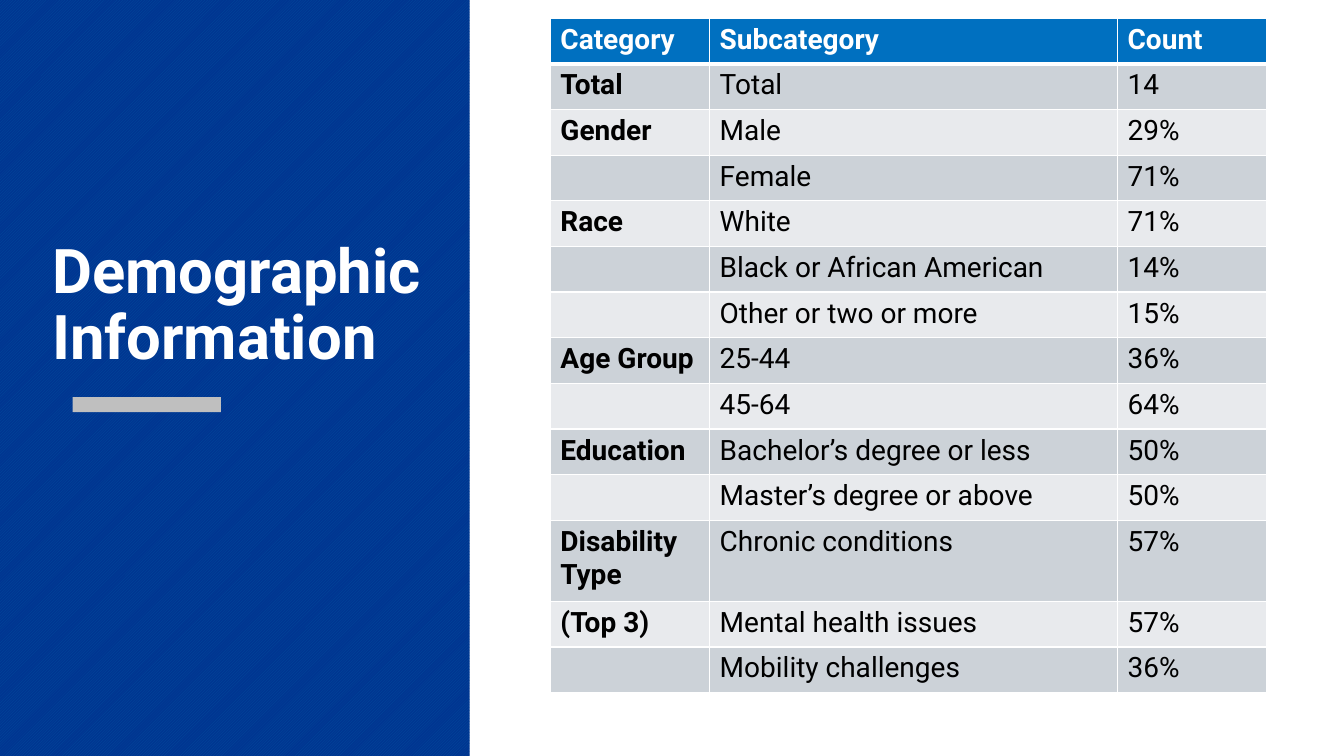
from lxml import etree
from pptx import Presentation
from pptx.dml.color import RGBColor
from pptx.enum import dml, shapes, text
from pptx.oxml import ns
from pptx.util import Pt

FONT = "Roboto"
WHITE = "FFFFFF"
COLUMN_WIDTHS = (113.8, 291.4, 106.6)
ROW_HEIGHT = 32.6
TALL_ROW_HEIGHT = 57.9
ROWS = [
    ("Category", "Subcategory", "Count"),
    ("Total", "Total", "14"),
    ("Gender", "Male", "29%"),
    ("", "Female", "71%"),
    ("Race", "White", "71%"),
    ("", "Black or African American", "14%"),
    ("", "Other or two or more", "15%"),
    ("Age Group", "25-44", "36%"),
    ("", "45-64", "64%"),
    ("Education", "Bachelor’s degree or less", "50%"),
    ("", "Master’s degree or above", "50%"),
    ("Disability Type", "Chronic conditions", "57%"),
    ("(Top 3)", "Mental health issues", "57%"),
    ("", "Mobility challenges", "36%"),
]


def color(value):
    """Turn a hex string into a colour."""
    return RGBColor.from_string(value)


def style_font(paragraph, size, value, bold):
    """Set the font of a whole paragraph."""
    font = paragraph.font
    font.name, font.size, font.bold = FONT, Pt(size), bold
    font.color.rgb = color(value)


def add_rectangle(slide, left, top, width, height):
    """Add a rectangle without line or shadow."""
    shape = slide.shapes.add_shape(
        shapes.MSO_SHAPE.RECTANGLE, Pt(left), Pt(top), Pt(width), Pt(height))
    shape.shadow.inherit = False
    shape.line.fill.background()
    return shape


def add_title_panel(slide, left, top, width, height):
    """Add the hatched side panel with its title and accent bar."""
    panel = add_rectangle(slide, left, top, width, height)
    panel.fill.patterned()
    panel.fill.pattern = dml.MSO_PATTERN.DARK_UPWARD_DIAGONAL
    panel.fill.fore_color.rgb = color("004F9D")
    panel.fill.back_color.rgb = color("013591")

    accent = add_rectangle(slide, left + 52, top + 283.7, 105.8, 10.8)
    accent.fill.solid()
    accent.fill.fore_color.rgb = color("BFBFBF")

    title = slide.shapes.add_textbox(
        Pt(left + 30.2), Pt(top + 74.9), Pt(width - 41.8), Pt(195.1))
    frame = title.text_frame
    frame.word_wrap = True
    frame.vertical_anchor = text.MSO_ANCHOR.BOTTOM
    paragraph = frame.paragraphs[0]
    paragraph.text = "Demographic Information"
    paragraph.line_spacing = 0.9
    style_font(paragraph, 44, WHITE, True)


def add_borders(cell, top, bottom):
    """Draw white cell borders, with the given top and bottom widths."""
    properties = cell._tc.get_or_add_tcPr()
    for side, width in (("L", 1), ("R", 1), ("T", top), ("B", bottom)):
        line = etree.SubElement(properties, ns.qn(f"a:ln{side}"), w=str(Pt(width)))
        fill = etree.SubElement(line, ns.qn("a:solidFill"))
        etree.SubElement(fill, ns.qn("a:srgbClr"), val=WHITE)


def add_demographics_table(slide, left, top):
    """Add the table of categories, subcategories and counts."""
    heights = [TALL_ROW_HEIGHT if row[0] == "Disability Type" else ROW_HEIGHT
               for row in ROWS]
    table = slide.shapes.add_table(
        len(ROWS), len(COLUMN_WIDTHS), Pt(left), Pt(top),
        Pt(sum(COLUMN_WIDTHS)), Pt(sum(heights))).table
    table.horz_banding = False
    for column, width in zip(table.columns, COLUMN_WIDTHS):
        column.width = Pt(width)
    for row_index, values in enumerate(ROWS):
        table.rows[row_index].height = Pt(heights[row_index])
        header = row_index == 0
        band = "0070C0" if header else ("E8EAED", "CCD2D8")[row_index % 2]
        for column_index, value in enumerate(values):
            cell = table.cell(row_index, column_index)
            add_borders(cell, 3 if row_index == 1 else 1, 3 if header else 1)
            cell.fill.solid()
            cell.fill.fore_color.rgb = color(band)
            paragraph = cell.text_frame.paragraphs[0]
            paragraph.text = value
            style_font(paragraph, 20, WHITE if header else "000000",
                       header or column_index == 0)


def main():
    """Build the slide and save it."""
    presentation = Presentation()
    presentation.slide_width, presentation.slide_height = Pt(960), Pt(540)
    slide = presentation.slides.add_slide(presentation.slide_layouts[6])
    add_title_panel(slide, 0, 0, 335.5, 540)
    add_demographics_table(slide, 393.1, 13)
    presentation.save("out.pptx")


if __name__ == "__main__":
    main()
